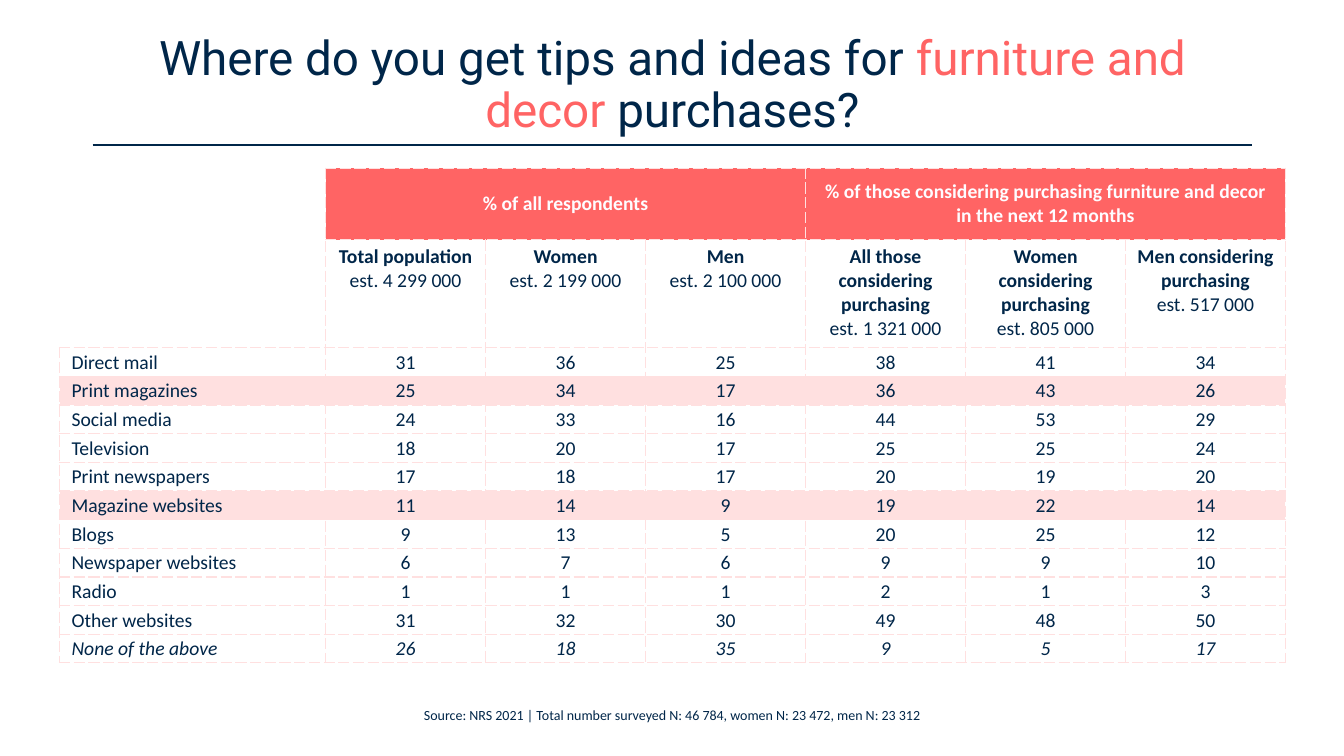
from lxml.etree import SubElement
from pptx import Presentation
from pptx.dml.color import RGBColor
from pptx.enum.shapes import MSO_CONNECTOR
from pptx.enum.text import MSO_ANCHOR, MSO_AUTO_SIZE, PP_ALIGN
from pptx.oxml.ns import qn
from pptx.util import Inches, Pt

COLORS = {
    "navy": "002649",
    "coral": "FF6464",
    "blush": "FFE0E0",
    "white": "FFFFFF",
    "header_text": "FEFCFF",
}
GROUPS = [
    "% of all respondents",
    "% of those considering purchasing furniture and decor in the next 12 months",
]
GROUP_SIZE = 3
AUDIENCES = [
    ("Total population", "est. 4 299 000"),
    ("Women", "est. 2 199 000"),
    ("Men", "est. 2 100 000"),
    ("All those considering purchasing", "est. 1 321 000"),
    ("Women considering purchasing", "est. 805 000"),
    ("Men considering purchasing", "est. 517 000"),
]
SOURCES = [
    ("Direct mail", 31, 36, 25, 38, 41, 34),
    ("Print magazines", 25, 34, 17, 36, 43, 26),
    ("Social media", 24, 33, 16, 44, 53, 29),
    ("Television", 18, 20, 17, 25, 25, 24),
    ("Print newspapers", 17, 18, 17, 20, 19, 20),
    ("Magazine websites", 11, 14, 9, 19, 22, 14),
    ("Blogs", 9, 13, 5, 20, 25, 12),
    ("Newspaper websites", 6, 7, 6, 9, 9, 10),
    ("Radio", 1, 1, 1, 2, 1, 3),
    ("Other websites", 31, 32, 30, 49, 48, 50),
    ("None of the above", 26, 18, 35, 9, 5, 17),
]
HIGHLIGHTED = {"Print magazines", "Magazine websites"}
ITALIC = {"None of the above"}


def color(name):
    return RGBColor.from_string(COLORS[name])


def style_font(font, size, color_name, name="Calibri", bold=False, italic=False):
    font.name = name
    font.size = Pt(size)
    font.bold = bold
    font.italic = italic
    font.color.rgb = color(color_name)


def add_title(slide, left, top, width, height):
    text_box = slide.shapes.add_textbox(
        Inches(left), Inches(top), Inches(width), Inches(height))
    text_frame = text_box.text_frame
    text_frame.word_wrap = True
    text_frame.vertical_anchor = MSO_ANCHOR.MIDDLE
    paragraph = text_frame.paragraphs[0]
    paragraph.alignment = PP_ALIGN.CENTER
    paragraph.line_spacing = 0.9
    for text, color_name in [
        ("Where do you get tips and ideas for ", "navy"),
        ("furniture and decor ", "coral"),
        ("purchases?", "navy"),
    ]:
        run = paragraph.add_run()
        run.text = text
        style_font(run.font, 34, color_name, "Roboto")

    rule_top = Inches(top + height + 0.05)
    rule = slide.shapes.add_connector(
        MSO_CONNECTOR.STRAIGHT, Inches(left), rule_top, Inches(left + width), rule_top)
    rule.line.color.rgb = color("navy")
    rule.line.width = Pt(1)
    SubElement(rule._element.spPr, qn("a:effectLst"))


def set_borders(cell, hidden=()):
    properties = cell._tc.get_or_add_tcPr()
    for side in ("lnL", "lnR", "lnT", "lnB"):
        line = SubElement(properties, qn(f"a:{side}"), w=str(Pt(1)))
        if side in hidden:
            SubElement(line, qn("a:noFill"))
        else:
            fill = SubElement(line, qn("a:solidFill"))
            SubElement(fill, qn("a:srgbClr"), val=COLORS["blush"])
            SubElement(line, qn("a:prstDash"), val="sysDash")


def fill_cell(cell, color_name):
    if color_name:
        cell.fill.solid()
        cell.fill.fore_color.rgb = color(color_name)
    else:
        cell.fill.background()


def write_cell(cell, text, color_name="navy", bold=False, italic=False,
               alignment=PP_ALIGN.CENTER):
    cell.text_frame.text = text
    paragraph = cell.text_frame.paragraphs[0]
    paragraph.alignment = alignment
    for run in paragraph.runs:
        style_font(run.font, 14, color_name, bold=bold, italic=italic)


def add_headers(table):
    for row in range(2):
        set_borders(table.cell(row, 0), hidden=("lnL", "lnT"))
        fill_cell(table.cell(row, 0), "white")
    table.cell(0, 0).merge(table.cell(1, 0))

    for column, (audience, estimate) in enumerate(AUDIENCES, start=1):
        group_cell = table.cell(0, column)
        set_borders(group_cell)
        fill_cell(group_cell, "coral")
        cell = table.cell(1, column)
        set_borders(cell)
        fill_cell(cell, None)
        write_cell(cell, f"{audience}\v{estimate}", bold=True)
        cell.text_frame.paragraphs[0].runs[1].font.bold = False

    for index, group in enumerate(GROUPS):
        first = 1 + index * GROUP_SIZE
        cell = table.cell(0, first)
        cell.merge(table.cell(0, first + GROUP_SIZE - 1))
        cell.vertical_anchor = MSO_ANCHOR.MIDDLE
        write_cell(cell, group, "header_text", bold=True)


def add_sources(table):
    for row, values in enumerate(SOURCES, start=2):
        name = values[0]
        for column, value in enumerate(values):
            cell = table.cell(row, column)
            set_borders(cell)
            fill_cell(cell, "blush" if name in HIGHLIGHTED else None)
            cell.margin_left = Inches(0.01 if column else 0.12)
            cell.margin_right = cell.margin_top = Inches(0.01)
            cell.margin_bottom = 0
            cell.vertical_anchor = MSO_ANCHOR.MIDDLE
            write_cell(cell, str(value), italic=name in ITALIC,
                       alignment=PP_ALIGN.CENTER if column else PP_ALIGN.LEFT)


def add_survey_table(slide, left, top, width, height):
    header_heights = [0.71, 1.07]
    name_width = 2.64
    table = slide.shapes.add_table(
        len(header_heights) + len(SOURCES), 1 + len(AUDIENCES),
        Inches(left), Inches(top), Inches(width), Inches(height)).table
    table.first_row = False
    table.horz_banding = False
    value_width = (width - name_width) / len(AUDIENCES)
    for column, column_width in zip(
            table.columns, [name_width] + [value_width] * len(AUDIENCES)):
        column.width = Inches(column_width)
    source_height = (height - sum(header_heights)) / len(SOURCES)
    for row, row_height in zip(
            table.rows, header_heights + [source_height] * len(SOURCES)):
        row.height = Inches(row_height)
    add_headers(table)
    add_sources(table)


def add_footnote(slide, left, top, width, height):
    text_box = slide.shapes.add_textbox(
        Inches(left), Inches(top), Inches(width), Inches(height))
    text_frame = text_box.text_frame
    text_frame.text = ("Source: NRS 2021 | Total number surveyed N: 46 784, "
                       "women N: 23 472, men N: 23 312")
    text_frame.word_wrap = False
    text_frame.auto_size = MSO_AUTO_SIZE.SHAPE_TO_FIT_TEXT
    paragraph = text_frame.paragraphs[0]
    paragraph.alignment = PP_ALIGN.CENTER
    style_font(paragraph.runs[0].font, 10, "navy")


def main():
    presentation = Presentation()
    presentation.slide_width = Inches(13.33)
    presentation.slide_height = Inches(7.5)
    slide = presentation.slides.add_slide(presentation.slide_layouts[6])
    add_title(slide, 0.92, 0.32, 11.5, 1.07)
    add_survey_table(slide, 0.59, 1.67, 12.16, 4.91)
    add_footnote(slide, 4.02, 6.96, 5.29, 0.27)
    presentation.save("out.pptx")


if __name__ == "__main__":
    main()
